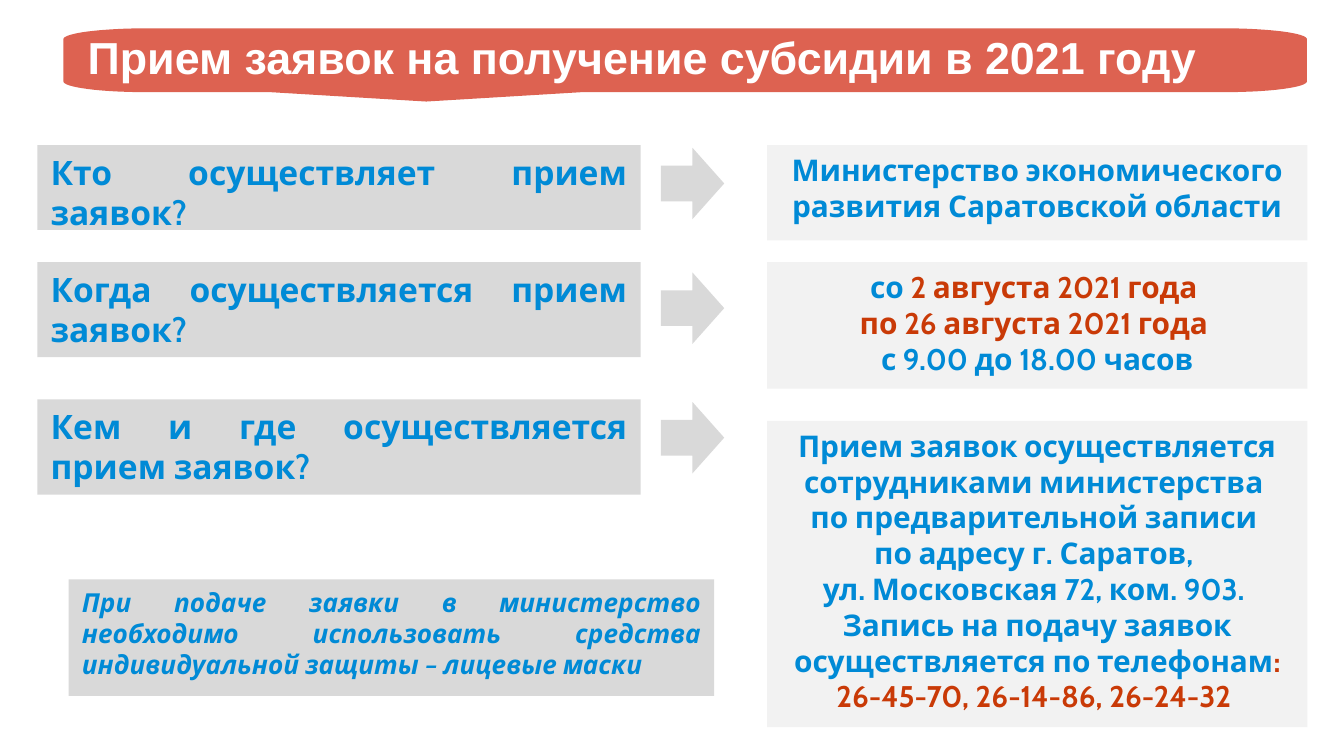
from math import cos, pi, sin

from pptx import Presentation
from pptx.dml.color import RGBColor
from pptx.enum.shapes import MSO_SHAPE as Preset
from pptx.enum.text import MSO_ANCHOR as Anchor, MSO_AUTO_SIZE as AutoSize, PP_ALIGN as Align
from pptx.util import Pt

COLORS = {
    "banner": "DD6251",
    "question": "D9D9D9",
    "answer": "F2F2F2",
    "blue": "008AD6",
    "accent": "C93A07",
    "white": "FFFFFF",
}

QUESTION = {"name": "Cabin", "size": Pt(18), "bold": True}
ANSWER = {"name": "Cabin", "size": Pt(16), "bold": True}
NOTE = {"name": "Cabin", "size": Pt(14), "bold": True, "italic": True}
HEADING = {"name": "Arial", "size": Pt(24), "bold": True}

TITLE = "Прием заявок на получение субсидии в 2021 году"
MASKS = (
    "При подаче заявки в министерство необходимо использовать "
    "средства индивидуальной защиты – лицевые маски"
)
ROWS = [
    {
        "top": 77.8, "question_height": 45.4, "arrow_drop": 1.4,
        "answer_drop": 0, "answer_height": 51,
        "question": "Кто осуществляет прием заявок?",
        "answer": [[("Министерство экономического развития Саратовской области", "blue")]],
    },
    {
        "top": 140.4, "question_height": 51, "arrow_drop": 5.6,
        "answer_drop": 0, "answer_height": 67.8,
        "question": "Когда осуществляется прием заявок?",
        "answer": [
            [("со ", "blue"), ("2 августа 2021 года ", "accent")],
            [("по 26 августа 2021 года ", "accent")],
            [("с 9.00 до 18.00 часов", "blue")],
        ],
    },
    {
        "top": 214, "question_height": 51, "arrow_drop": 1.4,
        "answer_drop": 11.4, "answer_height": 164.2,
        "question": "Кем и где осуществляется прием заявок?",
        "answer": [[
            ("Прием заявок осуществляется сотрудниками министерства \n"
             "по предварительной записи \n"
             "по адресу г. Саратов, \n"
             "ул. Московская 72, ком. 903. \n"
             "Запись на подачу заявок осуществляется по телефонам", "blue"),
            (": 26-45-70, 26-14-86, 26-24-32 ", "accent"),
        ]],
    },
]


def rgb(color):
    return RGBColor.from_string(COLORS[color])


def paint(shape, color):
    shape.shadow.inherit = False
    shape.fill.solid()
    shape.fill.fore_color.rgb = rgb(color)
    shape.line.fill.background()


def write(frame, paragraphs, font, align):
    for index, pieces in enumerate(paragraphs):
        paragraph = frame.paragraphs[0] if index == 0 else frame.add_paragraph()
        paragraph.alignment = align
        for text, color in pieces:
            for line_index, line in enumerate(text.split("\n")):
                if line_index:
                    paragraph.add_line_break()
                run = paragraph.add_run()
                run.text = line
                for key, value in font.items():
                    setattr(run.font, key, value)
                run.font.color.rgb = rgb(color)


def add_block(slide, preset, color, left, top, width, height):
    block = slide.shapes.add_shape(preset, Pt(left), Pt(top), Pt(width), Pt(height))
    paint(block, color)
    return block


def add_panel(slide, color, box, paragraphs, font, align):
    frame = add_block(slide, Preset.RECTANGLE, color, *box).text_frame
    frame.word_wrap = True
    frame.vertical_anchor = Anchor.TOP
    write(frame, paragraphs, font, align)


def add_banner(slide, left, top, width, height):
    radius_x, radius_y, steps = 44.6, 5.8, 16
    right, bottom = left + width, top + height
    corners = [
        (left + radius_x, top + radius_y, pi),
        (right - radius_x, top + radius_y, 1.5 * pi),
        (right - radius_x, bottom - radius_y, 0),
        (left + radius_x, bottom - radius_y, 0.5 * pi),
    ]
    outline = []
    for index, (center_x, center_y, start) in enumerate(corners):
        if index == 3:
            outline += [(left + width * 5 / 12, bottom),
                        (left + 194.4, bottom + 5),
                        (left + width / 6, bottom)]
        for step in range(steps + 1):
            angle = start + step * pi / 2 / steps
            outline.append((center_x + radius_x * cos(angle), center_y + radius_y * sin(angle)))
    builder = slide.shapes.build_freeform(Pt(outline[0][0]), Pt(outline[0][1]))
    builder.add_line_segments([(Pt(x), Pt(y)) for x, y in outline[1:]], close=True)
    paint(builder.convert_to_shape(), "banner")

    title = slide.shapes.title
    title.left, title.top, title.width, title.height = Pt(left), Pt(top), Pt(width), Pt(height)
    frame_format = {
        "word_wrap": True, "auto_size": AutoSize.NONE, "vertical_anchor": Anchor.MIDDLE,
        "margin_left": Pt(13), "margin_right": Pt(13),
        "margin_top": Pt(8.6), "margin_bottom": Pt(8.6),
    }
    for key, value in frame_format.items():
        setattr(title.text_frame, key, value)
    write(title.text_frame, [[(TITLE, "white")]], HEADING, Align.LEFT)
    title.text_frame.paragraphs[0].line_spacing = 0.9
    slide.shapes._spTree.append(title._element)


def add_row(slide, row, left, width):
    top = row["top"]
    answer_width = 289.4
    add_panel(slide, "question", (left, top, 323.2, row["question_height"]),
              [[(row["question"], "blue")]], QUESTION, Align.JUSTIFY)
    add_block(slide, Preset.RIGHT_ARROW, "question",
              left + 334, top + row["arrow_drop"], 34, 38.2)
    add_panel(slide, "answer",
              (left + width - answer_width, top + row["answer_drop"],
               answer_width, row["answer_height"]),
              row["answer"], ANSWER, Align.CENTER)


def main():
    deck = Presentation()
    deck.slide_width, deck.slide_height = Pt(720), Pt(405)
    slide = deck.slides.add_slide(deck.slide_layouts[5])
    add_banner(slide, 34, 15.2, 666.2, 34.2)
    for row in ROWS:
        add_row(slide, row, 20, 680.4)
    add_panel(slide, "question", (36.8, 310.4, 345.8, 62.4),
              [[(MASKS, "blue")]], NOTE, Align.JUSTIFY)
    deck.save("out.pptx")


if __name__ == "__main__":
    main()
